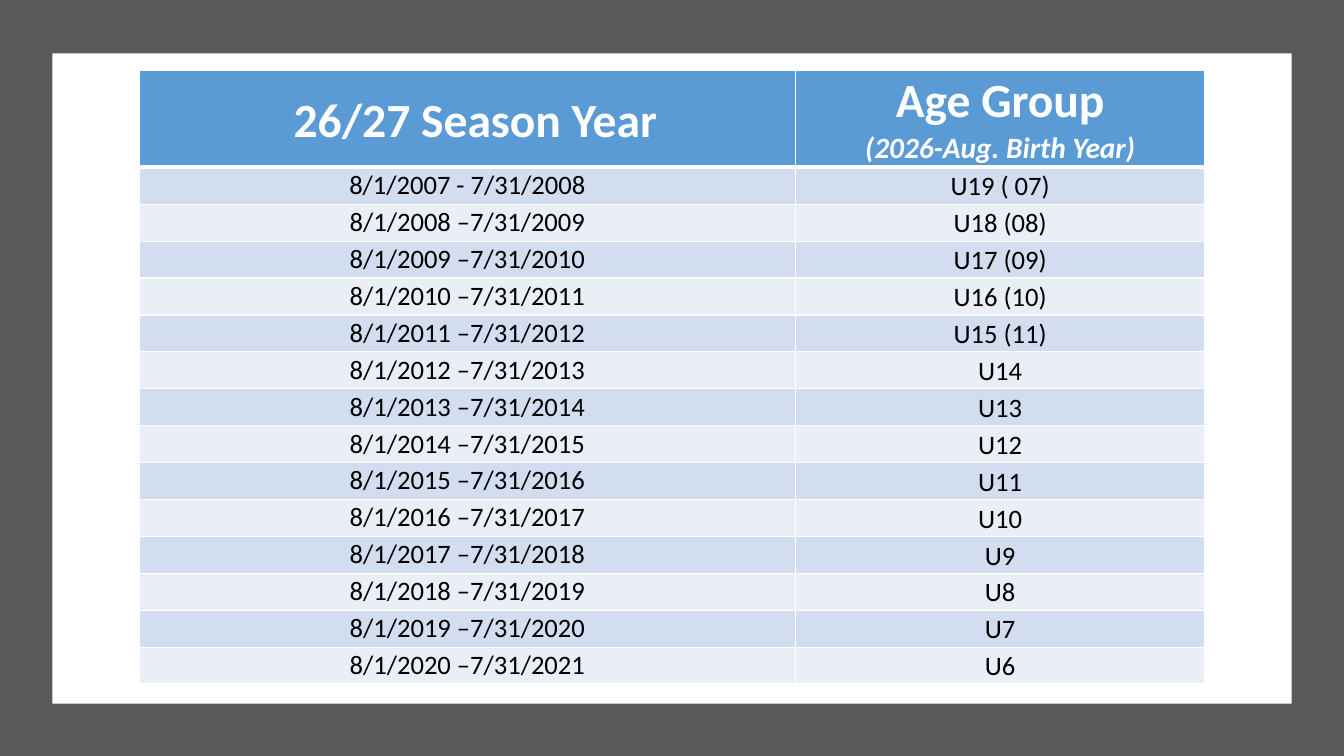
from lxml.etree import SubElement
from pptx import Presentation
from pptx.dml.color import RGBColor
from pptx.enum.shapes import MSO_SHAPE
from pptx.enum.text import MSO_ANCHOR, PP_ALIGN
from pptx.oxml.ns import qn
from pptx.util import Inches, Pt

SLIDE_W, SLIDE_H = 13.33, 7.5
FONT = "Calibri"
WHITE = RGBColor(0xFF, 0xFF, 0xFF)
BLACK = RGBColor(0, 0, 0)
FRAME_GREY = RGBColor(0x59, 0x59, 0x59)
HEADER_BLUE = RGBColor(0x5B, 0x9B, 0xD5)
BANDS = (RGBColor(0xD2, 0xDE, 0xEF), RGBColor(0xEA, 0xEF, 0xF7))

# Season rows: one birth year per age group, the youngest born from 2020
FIRST_YEAR, OLDEST_AGE = 2007, 19
DASHES = [" - "] + [" –"] * 13
BIRTH_YEARS = [" ( 07)", " (08)", " (09)", " (10)", " (11)"] + [""] * 9
SEASONS = [
    (f"8/1/{FIRST_YEAR + i}{dash}7/31/{FIRST_YEAR + i + 1}",
     f"U{OLDEST_AGE - i}{birth_year}")
    for i, (dash, birth_year) in enumerate(zip(DASHES, BIRTH_YEARS))
]

HEADER_H = 0.96
SEASON_SHARE = 6.51 / 10.57


def add_panel(slide, box, color):
    panel = slide.shapes.add_shape(MSO_SHAPE.RECTANGLE, *map(Inches, box))
    panel.shadow.inherit = False
    panel.fill.solid()
    panel.fill.fore_color.rgb = color
    panel.line.fill.background()


def add_borders(cell, top=1, bottom=1):
    properties = cell._tc.get_or_add_tcPr()
    for side, width in (("L", 1), ("R", 1), ("T", top), ("B", bottom)):
        border = SubElement(properties, qn(f"a:ln{side}"), w=str(Pt(width)))
        fill = SubElement(border, qn("a:solidFill"))
        SubElement(fill, qn("a:srgbClr"), val=str(WHITE))


def style_cell(cell, color, anchor, top=1, bottom=1):
    add_borders(cell, top, bottom)
    cell.fill.solid()
    cell.fill.fore_color.rgb = color
    cell.vertical_anchor = anchor
    cell.margin_left = cell.margin_right = 0
    cell.margin_top = cell.margin_bottom = 0


def style_paragraph(paragraph, size, color, bold=False, italic=False):
    paragraph.alignment = PP_ALIGN.CENTER
    font = paragraph.font
    font.name, font.size = FONT, Pt(size)
    font.bold, font.italic = bold, italic
    font.color.rgb = color


def add_season_table(slide, box):
    left, top, width, height = box
    table = slide.shapes.add_table(
        len(SEASONS) + 1, 2, *map(Inches, box)).table
    table.columns[0].width = Inches(width * SEASON_SHARE)
    table.columns[1].width = Inches(width * (1 - SEASON_SHARE))
    for i, row in enumerate(table.rows):
        row.height = Inches((height - HEADER_H) / len(SEASONS) if i else HEADER_H)

    # Header row
    season_head, age_head = table.cell(0, 0), table.cell(0, 1)
    for cell in (season_head, age_head):
        style_cell(cell, HEADER_BLUE, MSO_ANCHOR.MIDDLE, bottom=3)
    season_head.text = "26/27 Season Year"
    season_title = season_head.text_frame.paragraphs[0]
    season_title._p.get_or_add_pPr().set("marL", str(Inches(0.16)))
    season_title.line_spacing = 1.07
    style_paragraph(season_title, 34, WHITE, bold=True)
    age_head.text = "Age Group\n(2026-Aug. Birth Year)"
    age_title, age_note = age_head.text_frame.paragraphs
    style_paragraph(age_title, 34, WHITE, bold=True)
    style_paragraph(age_note, 21, WHITE, bold=True, italic=True)

    # Season rows, in alternating bands
    for i, season in enumerate(SEASONS):
        for column, text in enumerate(season):
            cell = table.cell(i + 1, column)
            anchor = MSO_ANCHOR.MIDDLE if column else MSO_ANCHOR.TOP
            style_cell(cell, BANDS[i % 2], anchor, top=1 if i else 3)
            cell.text = text
            paragraph = cell.text_frame.paragraphs[0]
            paragraph.line_spacing = 1.07
            style_paragraph(paragraph, 19, BLACK)


def add_season_slide(presentation):
    slide = presentation.slides.add_slide(presentation.slide_layouts[6])
    add_panel(slide, (0, 0, SLIDE_W, SLIDE_H), FRAME_GREY)
    add_panel(slide, (0.52, 0.53, 12.29, 6.45), WHITE)
    add_season_table(slide, (1.38, 0.7, 10.57, 6.09))


def main():
    presentation = Presentation()
    presentation.slide_width = Inches(SLIDE_W)
    presentation.slide_height = Inches(SLIDE_H)
    add_season_slide(presentation)
    presentation.save("out.pptx")


if __name__ == "__main__":
    main()
